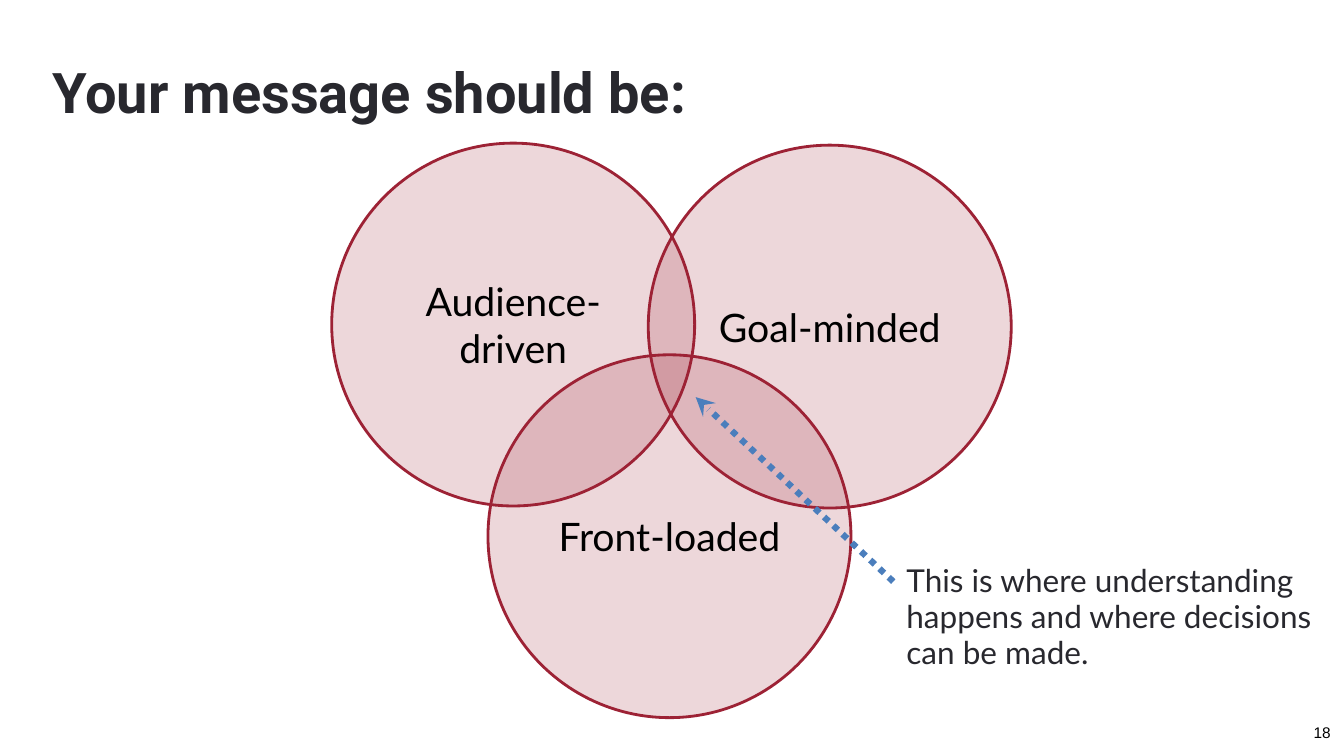
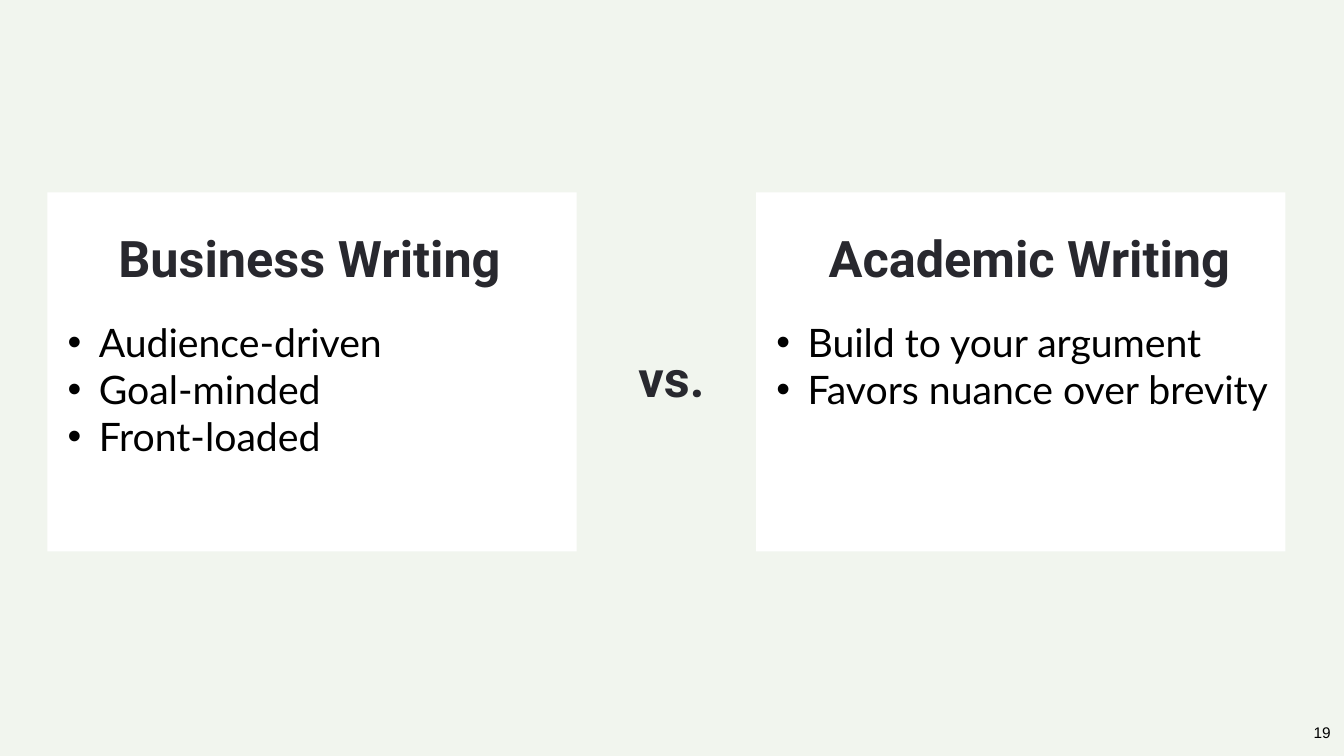
"""Build two slides on business messages: a Venn diagram and a comparison."""
from lxml import etree
from pptx import Presentation
from pptx.dml.color import RGBColor
from pptx.enum.dml import MSO_LINE
from pptx.enum.shapes import MSO_CONNECTOR, MSO_SHAPE
from pptx.enum.text import MSO_ANCHOR, MSO_AUTO_SIZE, PP_ALIGN
from pptx.oxml.ns import qn
from pptx.util import Inches, Pt

LEFT, CENTER = PP_ALIGN.LEFT, PP_ALIGN.CENTER
TOP, MIDDLE = MSO_ANCHOR.TOP, MSO_ANCHOR.MIDDLE
OVAL, RECT = MSO_SHAPE.OVAL, MSO_SHAPE.RECTANGLE
TITLE_ONLY, COMPARISON = 5, 4

INK, BLACK, WHITE = "28282E", "000000", "FFFFFF"
CRIMSON, BLUE, PALE = "9D2235", "4B7EBC", "F1F5EE"
HEADING = dict(font="Roboto", color=INK, bold=True)
CARD_HEADING = dict(HEADING, size=36, spacing=59.6, align=CENTER)
BODY = dict(font="Lato", color=BLACK, size=28)

MESSAGE_TITLE = "Your message should be:"
CAPTION = "This is where understanding happens and where decisions can be made."
DIAMETER = 3.6
CIRCLES = [
    ("Audience-driven", 3.29, 1.42),
    ("Goal-minded", 6.43, 1.44),
    ("Front-loaded", 4.84, 3.52),
]
VERSUS = "vs."
CARD_TOP, CARD_WIDTH, CARD_HEIGHT = 1.91, 5.25, 3.56
CARDS = [
    dict(left=0.47, heading="Business Writing", heading_box=(0.24, 2.03, 5.66, 0.82),
         points=["Audience-driven", "Goal-minded", "Front-loaded"]),
    dict(left=7.5, heading="Academic Writing", heading_box=(7.24, 2.03, 5.94, 0.82),
         points=["Build to your argument", "Favors nuance over brevity"]),
]
LIST_TOP, LIST_WIDTH, LIST_HEIGHT = 3.16, 5.07, 1.93
LIST_RIGHT_OVERHANG = 0.02
BULLET_INDENT = 0.31


def rgb(value):
    return RGBColor.from_string(value)


def place(sp, left, top, width, height):
    sp.left, sp.top = Inches(left), Inches(top)
    sp.width, sp.height = Inches(width), Inches(height)
    return sp


def add_bullet(p):
    pPr = p._p.get_or_add_pPr()
    pPr.set("marL", str(Inches(BULLET_INDENT)))
    pPr.set("indent", str(-Inches(BULLET_INDENT)))
    etree.SubElement(pPr, qn("a:buFont")).set("typeface", "Arial")
    etree.SubElement(pPr, qn("a:buChar")).set("char", "•")


def write(sp, *lines, font, color, size, bold=False, align=LEFT, anchor=TOP,
          spacing=None, inset=0, bullets=False):
    tf = sp.text_frame
    tf.word_wrap, tf.auto_size = True, MSO_AUTO_SIZE.NONE
    tf.vertical_anchor = anchor
    tf.margin_left = tf.margin_right = Inches(inset)
    tf.margin_top = tf.margin_bottom = Inches(inset / 2)
    for i, line in enumerate(lines):
        p = tf.add_paragraph() if i else tf.paragraphs[0]
        if bullets:
            add_bullet(p)
        p.alignment = align
        p.space_before = Pt(0)
        p.line_spacing = Pt(spacing) if spacing else 1.0
        r = p.add_run()
        r.text = line
        r.font.name, r.font.size, r.font.bold = font, Pt(size), bold
        r.font.color.rgb = rgb(color)


def add_text(s, box, text, **style):
    write(s.shapes.add_textbox(*map(Inches, box)), text, **style)


def add_shape(s, kind, box, fill, line=None, alpha=None):
    sp = s.shapes.add_shape(kind, *map(Inches, box))
    sp.shadow.inherit = False
    sp.fill.solid()
    sp.fill.fore_color.rgb = rgb(fill)
    if alpha:
        color = sp._element.spPr.find(".//" + qn("a:srgbClr"))
        etree.SubElement(color, qn("a:alpha")).set("val", str(alpha * 1000))
    if line:
        sp.line.color.rgb, sp.line.width = rgb(line), Pt(2)
    else:
        sp.line.fill.background()
    return sp


def add_arrow(s, start, end):
    arrow = s.shapes.add_connector(MSO_CONNECTOR.STRAIGHT, *map(Inches, start + end))
    arrow.line.color.rgb, arrow.line.width = rgb(BLUE), Pt(4.5)
    arrow.line.dash_style = MSO_LINE.ROUND_DOT
    etree.SubElement(arrow.line._get_or_add_ln(), qn("a:tailEnd")).set("type", "stealth")
    etree.SubElement(arrow._element.spPr, qn("a:effectLst"))


def add_slide(prs, layout, number, background):
    s = prs.slides.add_slide(prs.slide_layouts[layout])
    s.background.fill.solid()
    s.background.fill.fore_color.rgb = rgb(background)
    add_text(s, (12.93, 7.12, 0.4, 0.33), str(number),
             font="Arial", color=BLACK, size=11, inset=0.1)
    return s


def build_message(prs):
    s = add_slide(prs, TITLE_ONLY, 18, WHITE)
    write(place(s.shapes.title, 0.52, 0, 7.1, 1.65), MESSAGE_TITLE,
          size=40, spacing=59.9, anchor=MIDDLE, **HEADING)
    add_text(s, (8.99, 5.57, 4.3, 1.1), CAPTION, font="Lato", color=INK,
             size=22.5, spacing=25.8, anchor=MIDDLE)
    for label, left, top in CIRCLES:
        circle = add_shape(s, OVAL, (left, top, DIAMETER, DIAMETER),
                           CRIMSON, line=CRIMSON, alpha=18)
        write(circle, label, align=CENTER, anchor=MIDDLE, inset=0.1, **BODY)
    add_arrow(s, (8.86, 5.77), (6.9, 3.94))


def build_comparison(prs):
    s = add_slide(prs, COMPARISON, 19, PALE)
    title, *slots = s.placeholders
    write(place(title, 6.15, 3.22, 1.02, 0.82), VERSUS, **CARD_HEADING)
    for i, card in enumerate(CARDS):
        heading, points = slots[2 * i:2 * i + 2]
        panel = add_shape(s, RECT, (card["left"], CARD_TOP, CARD_WIDTH, CARD_HEIGHT), WHITE)
        s.shapes._spTree.insert(2, panel._element)
        write(place(heading, *card["heading_box"]), card["heading"], **CARD_HEADING)
        list_left = card["left"] + CARD_WIDTH + LIST_RIGHT_OVERHANG - LIST_WIDTH
        write(place(points, list_left, LIST_TOP, LIST_WIDTH, LIST_HEIGHT),
              *card["points"], bullets=True, **BODY)


def main():
    prs = Presentation()
    prs.slide_width, prs.slide_height = Inches(13.33), Inches(7.5)
    build_message(prs)
    build_comparison(prs)
    prs.save("out.pptx")


if __name__ == "__main__":
    main()
